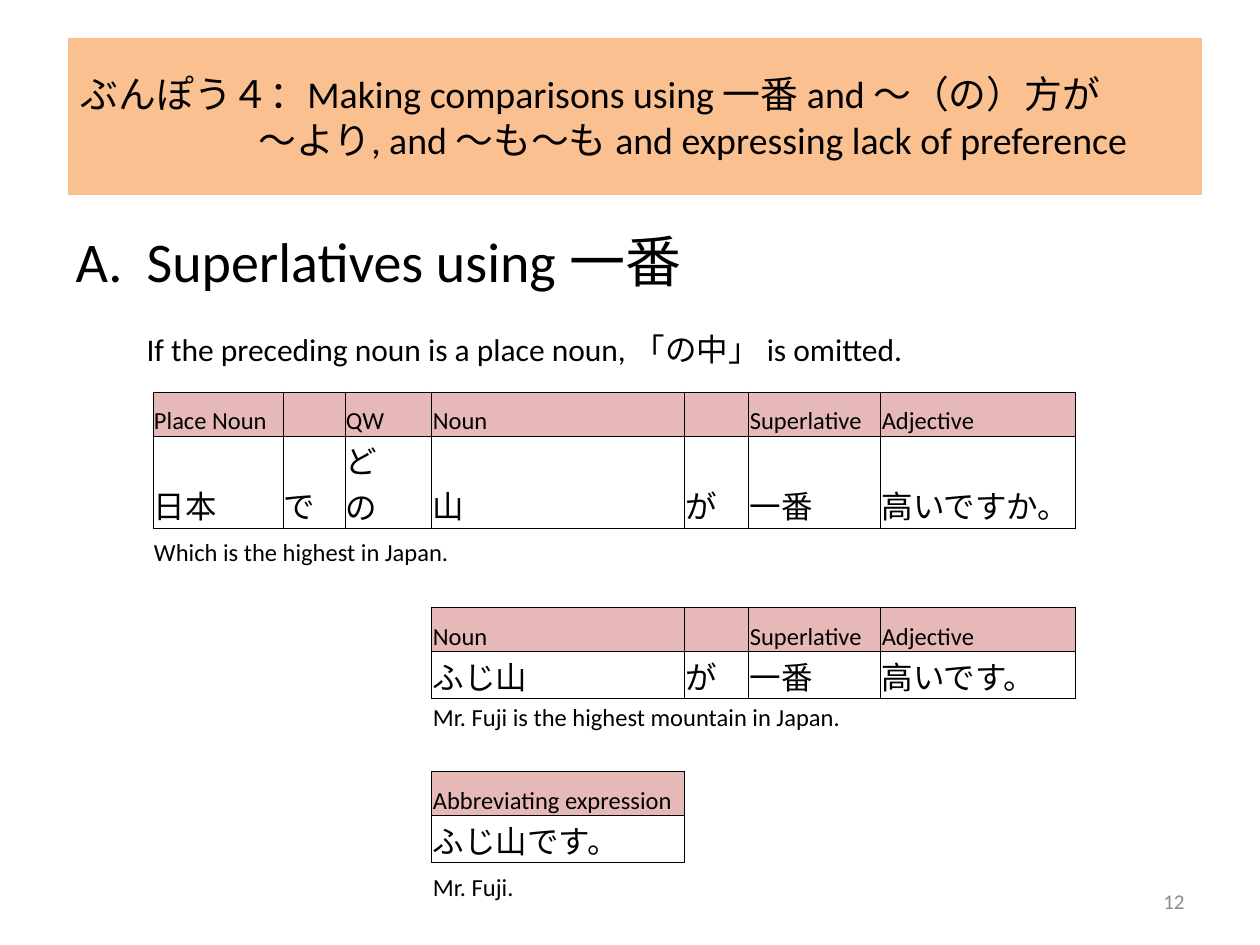
from lxml import etree
from pptx import Presentation
from pptx.dml.color import RGBColor
from pptx.enum.text import MSO_ANCHOR, MSO_AUTO_SIZE, PP_ALIGN
from pptx.oxml.ns import qn
from pptx.util import Emu, Pt

MIDDLE, BOTTOM = MSO_ANCHOR.MIDDLE, MSO_ANCHOR.BOTTOM
LEFT, RIGHT = PP_ALIGN.LEFT, PP_ALIGN.RIGHT
NO_FIT = MSO_AUTO_SIZE.NONE

PLAIN = "{2D5ABB26-0587-4C30-8999-92F81FD0307C}"  # no style, no grid
BLACK, GREY, PEACH, PINK = "000000", "8C8C8C", "FAC090", "E6B9B8"
LATIN, KANA = "Calibri", "Lato"

COLS = [130, 13, 49, 87, 253, 64, 44, 88, 195]
ROWS = [44, 92, 40, 40, 44, 47, 34, 39, 44, 47, 40]

# Each block: first row, last column, heads, words, caption, caption's last column
BLOCKS = [
    (0, 8, {0: "Place Noun", 3: "QW", 4: "Noun", 6: "Superlative", 8: "Adjective"},
     {0: "日本", 1: "で", 3: "どの　", 4: "山", 5: "が", 6: "一番", 8: "高いですか。"},
     "Which is the highest in Japan.", 4),
    (4, 8, {4: "Noun", 6: "Superlative", 8: "Adjective"},
     {4: "ふじ山", 5: "が", 6: "一番", 8: "高いです。"},
     "Mr. Fuji is the highest mountain in Japan.", 7),
    (8, 4, {4: "Abbreviating expression"}, {4: "ふじ山です。"}, "Mr. Fuji.", 4),
]


def px(n):
    return Emu(round(n * 914400 / 126))


def color(code):
    return RGBColor.from_string(code)


def place(shape, box):
    shape.left, shape.top, shape.width, shape.height = map(px, box)


def write(para, text, size, font=LATIN, code=BLACK):
    run = para.add_run()
    run.text = text
    run.font.size = Pt(size)
    run.font.name = font
    run.font.color.rgb = color(code)


def indent(para, left, first):
    props = para._p.get_or_add_pPr()
    props.set("marL", str(px(left)))
    props.set("indent", str(px(first)))
    return props


def add_title(slide, box):
    title = slide.shapes.title
    place(title, box)
    title.fill.solid()
    title.fill.fore_color.rgb = color(PEACH)
    frame = title.text_frame
    frame.auto_size = NO_FIT
    frame.vertical_anchor = MIDDLE
    para = frame.paragraphs[0]
    para.alignment = LEFT
    indent(para, 178, -178)  # second line hangs under the topic
    write(para, "ぶんぽう４：Making comparisons using 一番 and ～（の）方が", 21.6)
    para.add_line_break()
    write(para, "～より, and ～も～も and expressing lack of preference", 21.6)


def add_body(slide, box):
    body = slide.placeholders[1]
    place(body, box)
    frame = body.text_frame
    frame.auto_size = NO_FIT
    head, note = frame.paragraphs[0], frame.add_paragraph()

    # Lettered heading
    props = indent(head, 71, -71)
    etree.SubElement(props, qn("a:buAutoNum"), type="alphaUcPeriod")
    write(head, "Superlatives using ", 32)
    write(head, "一番", 32, KANA)

    # Note below it
    note.space_before = Pt(21)
    etree.SubElement(indent(note, 71, 0), qn("a:buNone"))
    write(note, "If the preceding noun is a place noun, ", 18)
    write(note, "「の中」 ", 18, KANA)
    write(note, "is omitted.", 18)


def rule(cell):
    props = cell._tc.get_or_add_tcPr()
    for side in ("lnL", "lnR", "lnT", "lnB"):
        line = etree.SubElement(props, qn("a:" + side), w=str(Pt(0.5)))
        fill = etree.SubElement(line, qn("a:solidFill"))
        etree.SubElement(fill, qn("a:srgbClr"), val=BLACK)


def fill_cell(cell, text, size, font=LATIN):
    if text:
        write(cell.text_frame.paragraphs[0], text, size, font)


def add_table(slide, box):
    shape = slide.shapes.add_table(len(ROWS), len(COLS), *map(px, box))
    table = shape.table
    table.first_row = table.horz_banding = False
    table._tbl.tblPr.find(qn("a:tableStyleId")).text = PLAIN
    for col, wide in zip(table.columns, COLS):
        col.width = px(wide)
    for row, high in zip(table.rows, ROWS):
        row.height = px(high)

    for cell in table.iter_cells():
        cell.margin_left = cell.margin_right = cell.margin_top = px(1)
        cell.margin_bottom = 0
        cell.vertical_anchor = BOTTOM

    # Heads, words and captions
    for top, last, heads, words, caption, end in BLOCKS:
        start = min(heads)
        for col in range(start, last + 1):
            head, word = table.cell(top, col), table.cell(top + 1, col)
            rule(head)
            rule(word)
            head.fill.solid()
            head.fill.fore_color.rgb = color(PINK)
            fill_cell(head, heads.get(col), 14)
            fill_cell(word, words.get(col), 18, KANA)
        foot = table.cell(top + 2, start)
        fill_cell(foot, caption, 14)
        if end > start:
            foot.merge(table.cell(top + 2, end))

    # Joined columns; the last row stays whole, as a column
    # that is joined in every row would be dropped
    for row in range(len(ROWS) - 1):
        pairs = [1] * (row != 2) + [6] * (row < 6) + [5] * (row > 6)
        for col in pairs:
            table.cell(row, col).merge(table.cell(row, col + 1))

    # Plain cells: no fill, and a small size so rows do not grow
    for cell in table.iter_cells():
        if cell._tc.tcPr.find(qn("a:solidFill")) is None:
            cell.fill.background()
        if not cell.text:
            para = cell.text_frame.paragraphs[0]._p
            for old in para.findall(qn("a:endParaRPr")):
                para.remove(old)
            etree.SubElement(para, qn("a:endParaRPr"), sz="1400")


def add_number(slide, box):
    frame = slide.shapes.add_textbox(*map(px, box)).text_frame
    frame.word_wrap = True
    frame.vertical_anchor = MIDDLE
    para = frame.paragraphs[0]
    para.alignment = RIGHT
    write(para, "12", 12, code=GREY)


def main():
    deck = Presentation()
    deck.slide_width, deck.slide_height = px(1260), px(945)
    slide = deck.slides.add_slide(deck.slide_layouts[1])
    add_body(slide, (63, 220, 1134, 624))
    add_number(slide, (903, 876, 294, 50))
    add_title(slide, (68, 38, 1134, 157))
    add_table(slide, (153, 392, sum(COLS), sum(ROWS)))
    deck.save("out.pptx")


if __name__ == "__main__":
    main()
